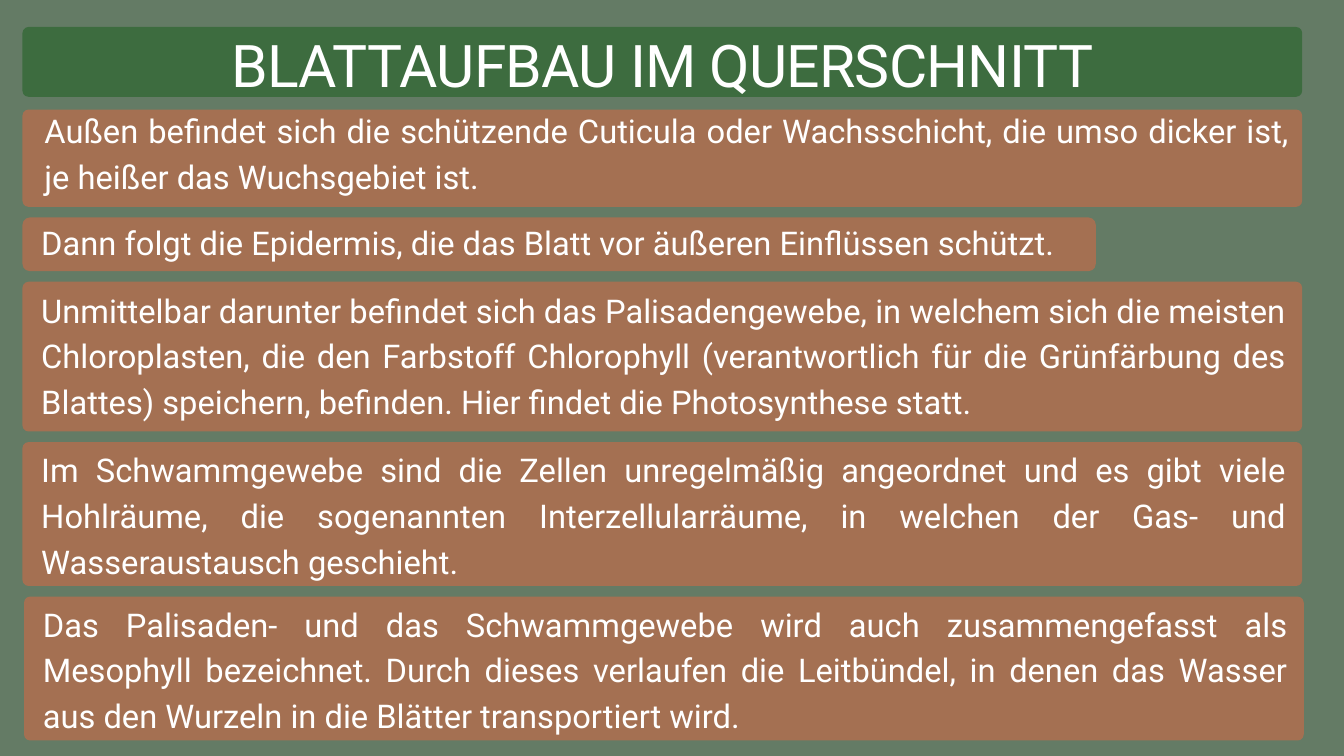
from dataclasses import dataclass

from pptx import Presentation
from pptx.dml.color import RGBColor
from pptx.enum.shapes import MSO_SHAPE as Shape
from pptx.enum.text import MSO_ANCHOR as Anchor, MSO_AUTO_SIZE as AutoSize, PP_ALIGN as Align
from pptx.util import Cm, Pt

COLORS = {"background": "647B65", "title": "3D6C3F", "panel": "A47052", "text": "FFFFFF"}
LEFT, WIDTH, TEXT_WIDTH = 0.85, 48.37, 47.09
FIRST_TOP, GAP = 4.14, 0.4
LINE_HEIGHT = 1.73
BODY = {"name": "Roboto", "size": Pt(35)}
HEADING = {"name": "Roboto", "size": Pt(63)}


@dataclass
class Panel:
    text: str
    height: float
    lines: int
    dy: float
    dx: float = 0.71
    left: float = LEFT
    width: float = WIDTH
    radius: float = 0.23


PANELS = [
    Panel("Außen befindet sich die schützende Cuticula oder Wachsschicht, die umso "
          "dicker ist, je heißer das Wuchsgebiet ist.", 3.68, 3, -0.18, dx=0.83),
    Panel("Dann folgt die Epidermis, die das Blatt vor äußeren Einflüssen schützt.",
          2.03, 1, -0.05, width=40.57, radius=0.28),
    Panel("Unmittelbar darunter befindet sich das Palisadengewebe, in welchem sich die "
          "meisten Chloroplasten, die den Farbstoff Chlorophyll (verantwortlich für die "
          "Grünfärbung des Blattes) speichern, befinden. Hier findet die Photosynthese "
          "statt.", 5.66, 4, 0.08),
    Panel("Im Schwammgewebe sind die Zellen unregelmäßig angeordnet und es gibt viele "
          "Hohlräume, die sogenannten Interzellularräume, in welchen der Gas- und "
          "Wasseraustausch geschieht.", 5.44, 4, 0.05),
    Panel("Das Palisaden- und das Schwammgewebe wird auch zusammengefasst als Mesophyll "
          "bezeichnet. Durch dieses verlaufen die Leitbündel, in denen das Wasser aus den "
          "Wurzeln in die Blätter transportiert wird.", 5.44, 4, 0.05, left=0.91),
]


def rgb(key: str) -> RGBColor:
    return RGBColor.from_string(COLORS[key])


def add_panel(s, left: float, top: float, width: float, height: float,
              color: str, radius: float = 0.23) -> None:
    sp = s.shapes.add_shape(Shape.ROUNDED_RECTANGLE, Cm(left), Cm(top), Cm(width), Cm(height))
    sp.adjustments[0] = radius / min(width, height)
    sp.shadow.inherit = False
    sp.fill.solid()
    sp.fill.fore_color.rgb = rgb(color)
    sp.line.fill.background()


def add_text(s, text: str, left: float, top: float, width: float, height: float,
             font: dict, align: Align, leading: float):
    tf = s.shapes.add_textbox(Cm(left), Cm(top), Cm(width), Cm(height)).text_frame
    frame = {"word_wrap": True, "auto_size": AutoSize.SHAPE_TO_FIT_TEXT,
             "vertical_anchor": Anchor.TOP, "margin_left": 0, "margin_right": 0,
             "margin_top": 0, "margin_bottom": 0}
    for name, value in frame.items():
        setattr(tf, name, value)
    p = tf.paragraphs[0]
    p.alignment = align
    p.line_spacing = Pt(leading)
    r = p.add_run()
    r.text = text
    for name, value in font.items():
        setattr(r.font, name, value)
    r.font.color.rgb = rgb("text")
    return r


def main() -> None:
    prs = Presentation()
    prs.slide_width, prs.slide_height = Cm(50.8), Cm(28.575)
    s = prs.slides.add_slide(prs.slide_layouts[6])
    s.background.fill.solid()
    s.background.fill.fore_color.rgb = rgb("background")

    # Title bar
    add_panel(s, LEFT, 1.02, WIDTH, 2.64, "title")
    r = add_text(s, "BLATTAUFBAU IM QUERSCHNITT", LEFT, 1.09, WIDTH, 2.67,
                 HEADING, Align.CENTER, 75)
    r.font._element.set("spc", "-80")

    # Leaf layers, stacked with equal gaps
    top = FIRST_TOP
    for panel in PANELS:
        add_panel(s, panel.left, top, panel.width, panel.height, "panel", panel.radius)
        add_text(s, panel.text, panel.left + panel.dx, top + panel.dy, TEXT_WIDTH,
                 panel.lines * LINE_HEIGHT, BODY, Align.JUSTIFY, 49)
        top += panel.height + GAP

    prs.save("out.pptx")


if __name__ == "__main__":
    main()
